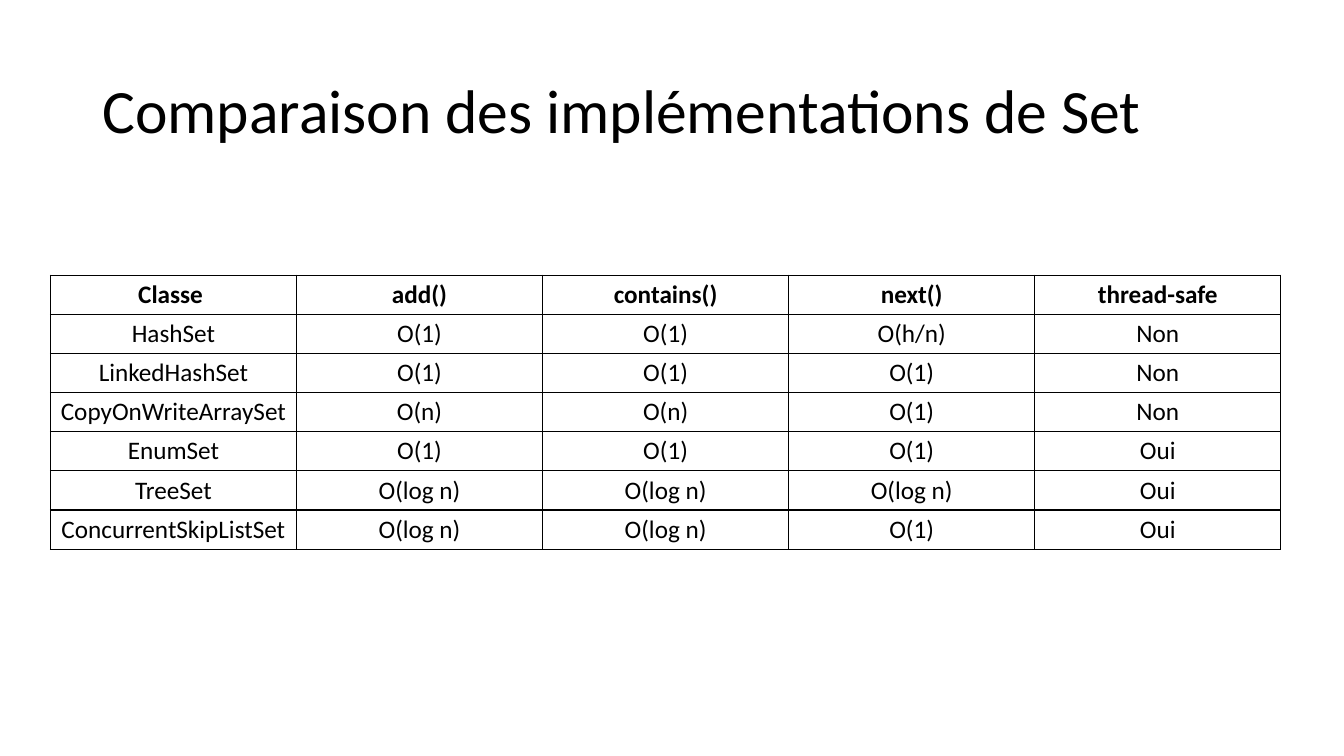
"""Build a slide with a table comparing Java Set implementations."""
import dataclasses

import pptx
import pptx.dml.color
import pptx.enum.text
import pptx.oxml
import pptx.oxml.ns
import pptx.util

Pt = pptx.util.Pt
PP_ALIGN = pptx.enum.text.PP_ALIGN
MSO_ANCHOR = pptx.enum.text.MSO_ANCHOR


@dataclasses.dataclass(frozen=True)
class Theme:
    font: str = "Calibri"
    ink: str = "000000"
    title_size: int = 44
    cell_size: int = 18
    border: int = 1


theme = Theme()


def add_run(p, text, size, bold=False):
    r = p.add_run()
    r.text = text
    r.font.name = theme.font
    r.font.size = Pt(size)
    r.font.bold = bold
    r.font.color.rgb = pptx.dml.color.RGBColor.from_string(theme.ink)


def add_borders(cell):
    tc_pr = cell._tc.get_or_add_tcPr()
    for side in ("lnL", "lnR", "lnT", "lnB"):
        tc_pr.append(pptx.oxml.parse_xml(
            f'<a:{side} {pptx.oxml.ns.nsdecls("a")} w="{Pt(theme.border)}">'
            f'<a:solidFill><a:srgbClr val="{theme.ink}"/></a:solidFill></a:{side}>'))


prs = pptx.Presentation()
prs.slide_width, prs.slide_height = Pt(960), Pt(540)
s = prs.slides.add_slide(prs.slide_layouts[5])

title = s.shapes.title
title.left, title.top, title.width, title.height = Pt(66), Pt(28.75), Pt(828), Pt(104.4)
tf = title.text_frame
tf.word_wrap = True
tf.auto_size = pptx.enum.text.MSO_AUTO_SIZE.NONE
tf.vertical_anchor = MSO_ANCHOR.MIDDLE
p = tf.paragraphs[0]
p.alignment = PP_ALIGN.LEFT
p.line_spacing = 0.9
add_run(p, "Comparaison des implémentations de Set", theme.title_size)

rows = [
    ("Classe ", "add()", "contains()", "next()", "thread-safe"),
    ("HashSet", "O(1)", "O(1)", "O(h/n)", "Non"),
    ("LinkedHashSet", "O(1)", "O(1)", "O(1)", "Non"),
    ("CopyOnWriteArraySet", "O(n)", "O(n)", "O(1)", "Non"),
    ("EnumSet", "O(1)", "O(1)", "O(1)", "Oui"),
    ("TreeSet", "O(log n)", "O(log n)", "O(log n)", "Oui"),
    ("ConcurrentSkipListSet", "O(log n)", "O(log n)", "O(1)", "Oui"),
]
table = s.shapes.add_table(len(rows), len(rows[0]), Pt(36), Pt(196.6),
                           Pt(879), Pt(193)).table
table.first_row = False
table.horz_banding = False
for i, row in enumerate(rows):
    for j, text in enumerate(row):
        cell = table.cell(i, j)
        cell.margin_left = cell.margin_right = Pt(3)
        cell.margin_top = cell.margin_bottom = Pt(3)
        cell.vertical_anchor = MSO_ANCHOR.MIDDLE
        add_borders(cell)
        cell.fill.background()
        p = cell.text_frame.paragraphs[0]
        p.alignment = PP_ALIGN.CENTER
        add_run(p, text, theme.cell_size, bold=i == 0)

prs.save("out.pptx")
